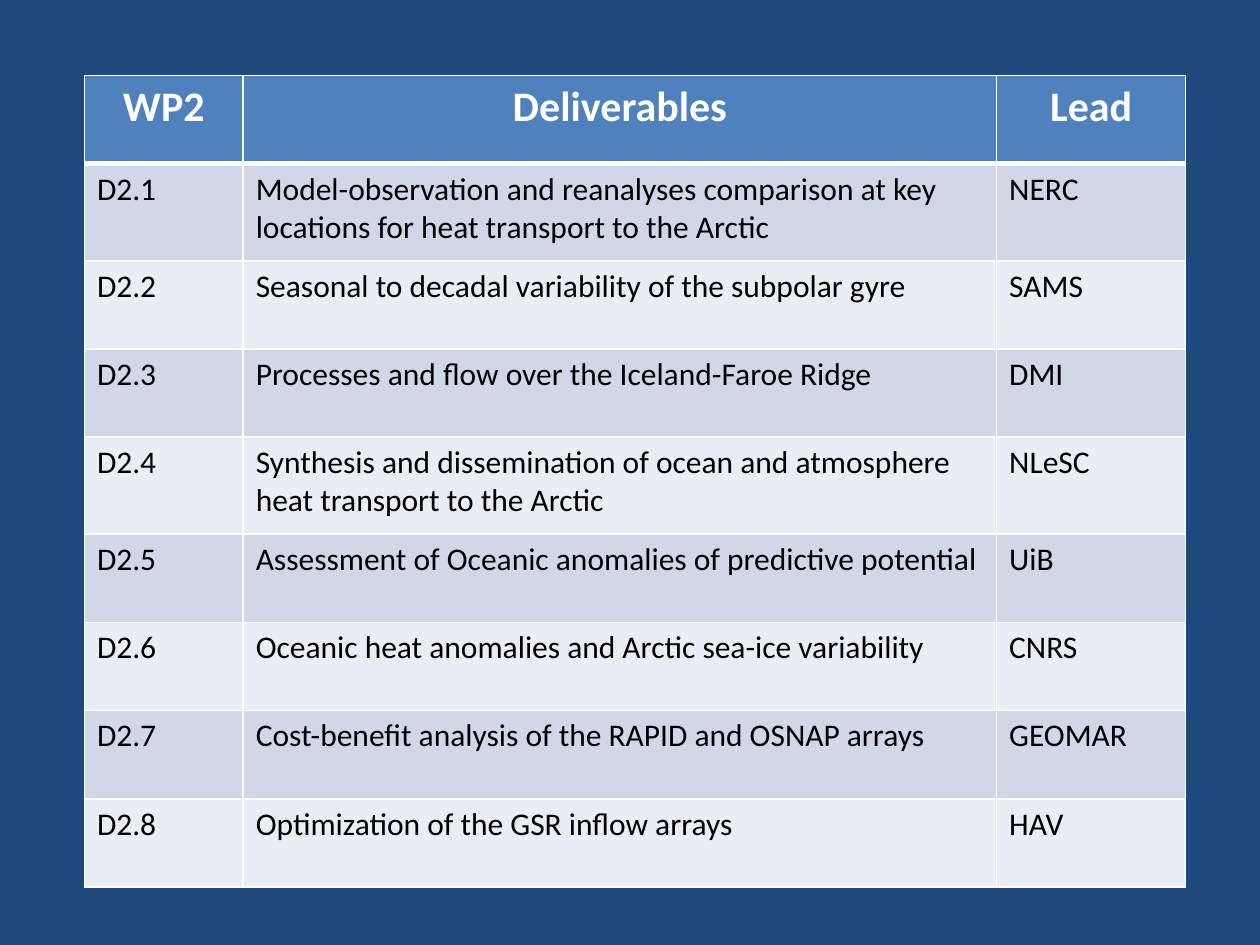
from pptx import Presentation
from pptx.dml.color import RGBColor
from pptx.enum.text import PP_ALIGN
from pptx.oxml.ns import qn
from pptx.util import Inches, Pt
from lxml.etree import SubElement

HEADER = ("WP2", "Deliverables", "Lead")
DELIVERABLES = [
    ("Model-observation and reanalyses comparison at key locations "
     "for heat transport to the Arctic", "NERC"),
    ("Seasonal to decadal variability of the subpolar gyre", "SAMS"),
    ("Processes and flow over the Iceland-Faroe Ridge", "DMI"),
    ("Synthesis and dissemination of ocean and atmosphere "
     "heat transport to the Arctic", "NLeSC"),
    ("Assessment of Oceanic anomalies of predictive potential", "UiB"),
    ("Oceanic heat anomalies and Arctic sea-ice variability", "CNRS"),
    ("Cost-benefit analysis of the RAPID and OSNAP arrays", "GEOMAR"),
    ("Optimization of the GSR inflow arrays", "HAV"),
]
COLUMN_WIDTHS = (1.26, 5.98, 1.5)
ROW_HEIGHT, TWO_LINE_HEIGHT = 0.7, 0.77
TWO_LINE_ROWS = (1, 4)


def color(value):
    return RGBColor.from_string(value)


class DeliverablesSlide:
    background = "1F497D"
    border = "FFFFFF"
    header_fill = "4F81BD"
    band_fills = ("E9EDF4", "D0D8E8")
    header_font = {"name": "Calibri", "size": Pt(24), "bold": True}
    body_font = {"name": "Calibri", "size": Pt(18), "bold": False}

    def __init__(self, deck):
        self.page = deck.slides.add_slide(deck.slide_layouts[6])
        fill = self.page.background.fill
        fill.solid()
        fill.fore_color.rgb = color(self.background)

    def add_table(self, rows, left, top, widths, heights):
        frame = self.page.shapes.add_table(
            len(rows), len(widths), Inches(left), Inches(top),
            Inches(sum(widths)), Inches(sum(heights)))
        table = frame.table
        for column, width in zip(table.columns, widths):
            column.width = Inches(width)
        for row, height in zip(table.rows, heights):
            row.height = Inches(height)
        for row_index, texts in enumerate(rows):
            for column_index, text in enumerate(texts):
                self.format_cell(table.cell(row_index, column_index), text, row_index)

    def format_cell(self, cell, text, row_index):
        is_header = row_index == 0
        self.add_borders(cell, {
            "L": 1, "R": 1,
            "T": 3 if row_index == 1 else 1,
            "B": 3 if is_header else 1,
        })
        cell.fill.solid()
        cell.fill.fore_color.rgb = color(
            self.header_fill if is_header else self.band_fills[row_index % 2])

        para = cell.text_frame.paragraphs[0]
        para.alignment = PP_ALIGN.CENTER if is_header else PP_ALIGN.LEFT
        span = para.add_run()
        span.text = text
        for name, value in (self.header_font if is_header else self.body_font).items():
            setattr(span.font, name, value)
        span.font.color.rgb = color("FFFFFF" if is_header else "000000")

    def add_borders(self, cell, widths):
        """Draw cell sides; must run before the fill, which follows them in the XML."""
        properties = cell._tc.get_or_add_tcPr()
        for side, width in widths.items():
            line = SubElement(properties, qn(f"a:ln{side}"), w=str(Pt(width)))
            fill = SubElement(line, qn("a:solidFill"))
            SubElement(fill, qn("a:srgbClr"), val=self.border)


def main():
    deck = Presentation()
    deck.slide_width, deck.slide_height = Inches(10), Inches(7.5)
    rows = [HEADER] + [
        (f"D2.{number}", title, lead)
        for number, (title, lead) in enumerate(DELIVERABLES, start=1)
    ]
    heights = [TWO_LINE_HEIGHT if index in TWO_LINE_ROWS else ROW_HEIGHT
               for index in range(len(rows))]
    DeliverablesSlide(deck).add_table(rows, 0.67, 0.6, COLUMN_WIDTHS, heights)
    deck.save("out.pptx")


if __name__ == "__main__":
    main()
